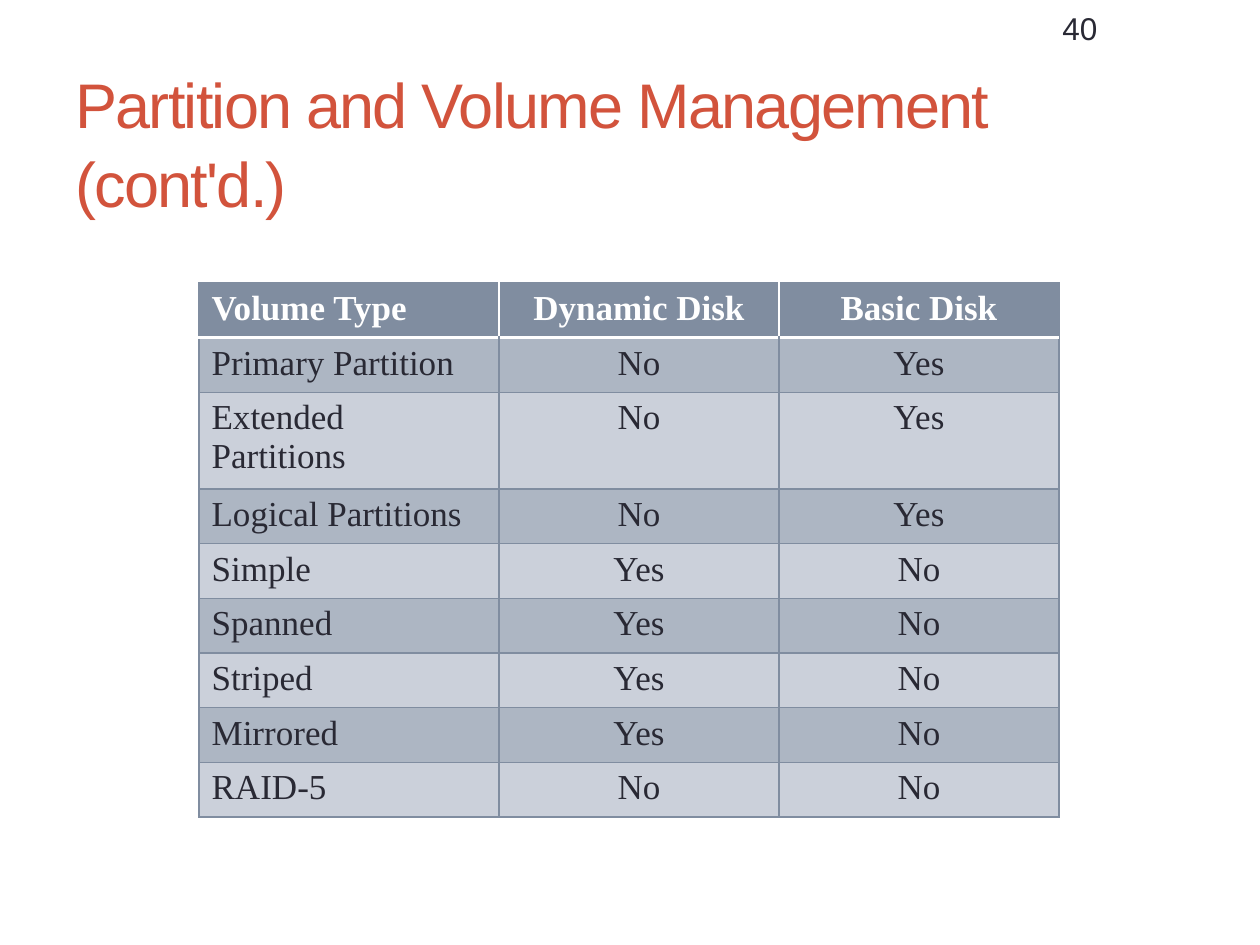
from pptx import Presentation
from pptx.dml.color import RGBColor
from pptx.enum.text import MSO_ANCHOR as Anchor, PP_ALIGN as Align
from pptx.oxml import parse_xml
from pptx.oxml.ns import nsdecls

PX = 914400 // 126
SLATE, INK, WHITE = "808DA0", "292934", "FFFFFF"
DARK, LIGHT = "ADB6C3", "CBD0DA"


def rgb(code):
    return RGBColor.from_string(code)


def edge(cell, side, color, width):
    """Draw one cell border; width is in points."""
    line = parse_xml(
        f'<a:{side} {nsdecls("a")} w="{int(width * 12700)}">'
        f'<a:solidFill><a:srgbClr val="{color}"/></a:solidFill></a:{side}>')
    props = cell._tc.get_or_add_tcPr()
    # Borders come before the fill, in the order they are drawn
    props.insert(len(props) - 1, line)


class Deck:
    def __init__(self, wide, high):
        self.prs = Presentation()
        self.prs.slide_width, self.prs.slide_height = wide * PX, high * PX
        self.slide = self.prs.slides.add_slide(self.prs.slide_layouts[6])

    def style(self, para, size, color, face, bold=False):
        font = para.font
        font.size, font.name, font.bold = size * 12700, face, bold
        font.color.rgb = rgb(color)

    def text(self, box, words, size, color, anchor=Anchor.TOP, track=0, lead=1.0):
        shape = self.slide.shapes.add_textbox(*(n * PX for n in box))
        frame = shape.text_frame
        frame.word_wrap, frame.vertical_anchor = True, anchor
        para = frame.paragraphs[0]
        run = para.add_run()
        run.text = words
        para.line_spacing = lead
        self.style(para, size, color, "Arial")
        if track:
            run.font._element.set("spc", str(track * 100))

    def table(self, left, top, cols, high, rows):
        frame = self.slide.shapes.add_table(
            len(rows), len(cols), left * PX, top * PX,
            sum(cols) * PX, high * len(rows) * PX)
        grid = frame.table
        for col, wide in zip(grid.columns, cols):
            col.width = wide * PX
        for r, row in enumerate(rows):
            grid.rows[r].height = high * PX
            for c, words in enumerate(row):
                self.cell(grid.cell(r, c), words, r, c, len(cols) - 1)

    def cell(self, cell, words, r, c, last):
        head = r == 0
        cell.text = words
        para = cell.text_frame.paragraphs[0]
        para.alignment = Align.CENTER if c else Align.LEFT
        self.style(para, 20, WHITE if head else INK, "Times New Roman", head)
        cell.fill.solid()
        cell.fill.fore_color.rgb = rgb(SLATE if head else DARK if r % 2 else LIGHT)
        # The header has no inner rules and a thick white line below
        if not head or c == 0:
            edge(cell, "lnL", SLATE, 0.75)
        if not head or c == last:
            edge(cell, "lnR", SLATE, 0.75)
        edge(cell, "lnT", *((WHITE, 2.08) if r == 1 else (SLATE, 0.75)))
        edge(cell, "lnB", *((WHITE, 2.08) if head else (SLATE, 0.75)))


def main():
    deck = Deck(1260, 945)

    # Title and page number
    deck.text((63, 73, 1134, 136), "Partition and Volume Management (cont'd.)",
              36, "D2533C", Anchor.MIDDLE, track=-1, lead=1.05)
    deck.text((1050, 3, 147, 45), "40", 18, INK)

    # Volume types by disk kind
    deck.table(199, 283, (300, 280, 280), 51, [
        ("Volume Type", "Dynamic Disk", "Basic Disk"),
        ("Primary Partition", "No", "Yes"),
        ("Extended Partitions", "No", "Yes"),
        ("Logical Partitions", "No", "Yes"),
        ("Simple", "Yes", "No"),
        ("Spanned", "Yes", "No"),
        ("Striped", "Yes", "No"),
        ("Mirrored", "Yes", "No"),
        ("RAID-5", "No", "No"),
    ])

    deck.prs.save("out.pptx")


if __name__ == "__main__":
    main()
